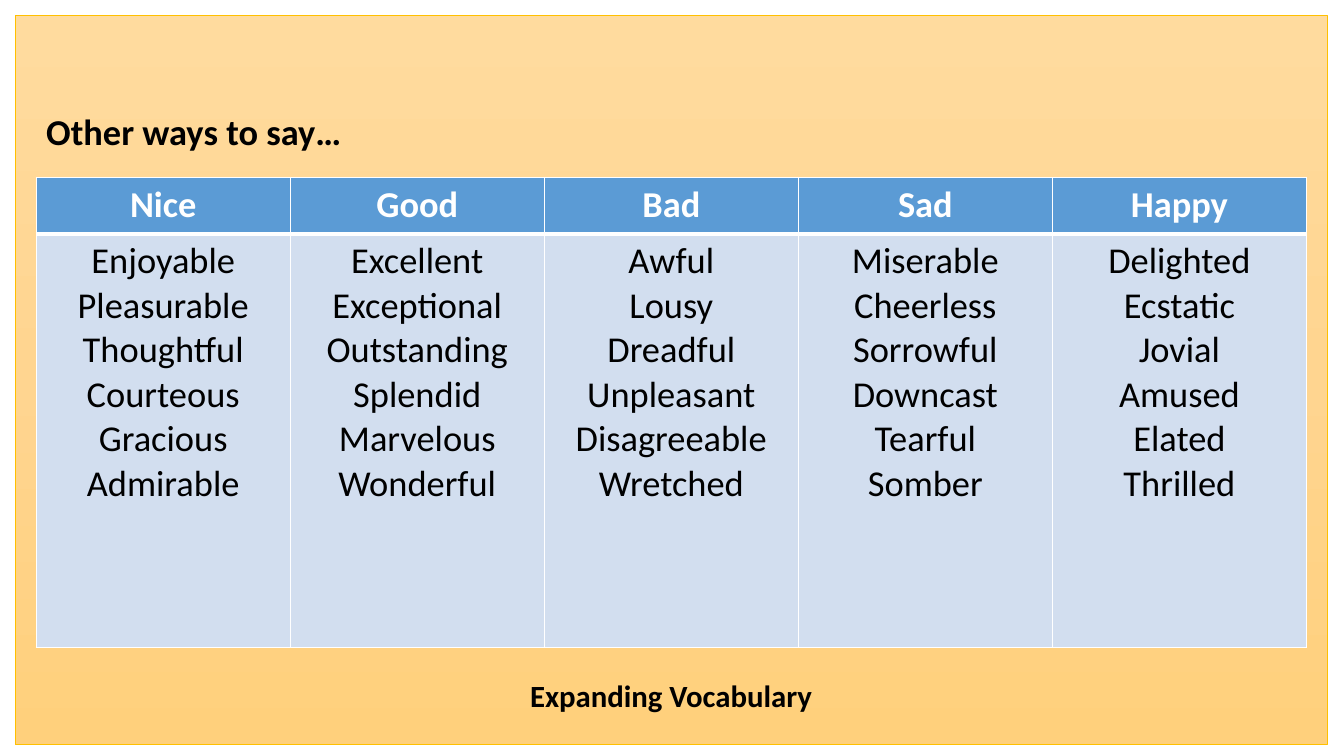
from copy import deepcopy
from dataclasses import dataclass

from lxml import etree
from pptx import Presentation
from pptx.dml.color import RGBColor
from pptx.enum.shapes import MSO_SHAPE
from pptx.enum.text import MSO_ANCHOR, PP_ALIGN
from pptx.oxml.ns import qn
from pptx.slide import Slide
from pptx.table import _Cell
from pptx.text.text import TextFrame
from pptx.util import Emu, Inches, Pt

RECTANGLE = MSO_SHAPE.RECTANGLE
BOTTOM = MSO_ANCHOR.BOTTOM
LEFT, CENTER = PP_ALIGN.LEFT, PP_ALIGN.CENTER

BLACK = RGBColor(0x00, 0x00, 0x00)
WHITE = RGBColor(0xFF, 0xFF, 0xFF)
GOLD = RGBColor(0xFF, 0xC0, 0x00)
BLUE = RGBColor(0x5B, 0x9B, 0xD5)
PALE_BLUE = RGBColor(0xD2, 0xDE, 0xEF)
PANEL_STOPS = (
    RGBColor(0xFF, 0xDB, 0x9E),
    RGBColor(0xFF, 0xD5, 0x90),
    RGBColor(0xFF, 0xD0, 0x7C),
)

FONT = "Calibri"
SLIDE_W, SLIDE_H = Inches(13.33), Inches(7.5)


@dataclass(frozen=True)
class Box:
    """A place on the slide, in percent of its width and height."""
    x: float
    y: float
    w: float
    h: float

    def emu(self) -> tuple[Emu, Emu, Emu, Emu]:
        return (Emu(int(SLIDE_W * self.x / 100)), Emu(int(SLIDE_H * self.y / 100)),
                Emu(int(SLIDE_W * self.w / 100)), Emu(int(SLIDE_H * self.h / 100)))


@dataclass(frozen=True)
class TextStyle:
    size: float
    color: RGBColor
    bold: bool
    align: PP_ALIGN


@dataclass(frozen=True)
class WordList:
    head: str
    synonyms: tuple[str, ...]


PANEL = Box(1.13, 2, 97.6, 96.53)
TABLE = Box(2.7, 23.47, 94.52, 62.13)
TITLE = Box(2.7, 13.73, 87.77, 7.2)
HEAD_SHARE = 0.12

TITLE_STYLE = TextStyle(26, BLACK, True, LEFT)
CAPTION_STYLE = TextStyle(22, BLACK, True, CENTER)
HEAD_STYLE = TextStyle(26, WHITE, True, CENTER)
WORD_STYLE = TextStyle(26, BLACK, False, CENTER)

WORD_LISTS = (
    WordList("Nice", ("Enjoyable", "Pleasurable", "Thoughtful",
                      "Courteous", "Gracious", "Admirable")),
    WordList("Good", ("Excellent", "Exceptional", "Outstanding",
                      "Splendid", "Marvelous", "Wonderful")),
    WordList("Bad", ("Awful", "Lousy", "Dreadful",
                     "Unpleasant", "Disagreeable", "Wretched")),
    WordList("Sad", ("Miserable", "Cheerless", "Sorrowful",
                     "Downcast", "Tearful", "Somber")),
    WordList("Happy", ("Delighted", "Ecstatic", "Jovial",
                       "Amused", "Elated", "Thrilled")),
)


def write(tf: TextFrame, lines: tuple[str, ...], style: TextStyle) -> None:
    tf.word_wrap = True
    for i, line in enumerate(lines):
        p = tf.add_paragraph() if i else tf.paragraphs[0]
        p.alignment = style.align
        r = p.add_run()
        r.text = line
        r.font.name = FONT
        r.font.size = Pt(style.size)
        r.font.bold = style.bold
        r.font.color.rgb = style.color


def add_panel(s: Slide, box: Box, caption: str) -> None:
    sp = s.shapes.add_shape(RECTANGLE, *box.emu())
    sp.shadow.inherit = False
    sp.line.color.rgb = GOLD
    sp.line.width = Pt(0.5)

    # Three-stop gradient, running downwards
    sp.fill.gradient()
    sp.fill.gradient_angle = 270
    first = sp._element.spPr.find(".//" + qn("a:gs"))
    first.addnext(deepcopy(first))
    for i, (stop, color) in enumerate(zip(sp.fill.gradient_stops, PANEL_STOPS)):
        stop.position = i / (len(PANEL_STOPS) - 1)
        stop.color.rgb = color

    tf = sp.text_frame
    tf.vertical_anchor = BOTTOM
    tf.margin_bottom = Inches(0.31)
    write(tf, (caption,), CAPTION_STYLE)


def add_borders(cell: _Cell, top: float, bottom: float) -> None:
    tcPr = cell._tc.get_or_add_tcPr()
    for side, width in (("L", 1), ("R", 1), ("T", top), ("B", bottom)):
        ln = etree.SubElement(tcPr, qn(f"a:ln{side}"), w=str(Pt(width)))
        fill = etree.SubElement(ln, qn("a:solidFill"))
        etree.SubElement(fill, qn("a:srgbClr"), val=str(WHITE))


def fill_cell(cell: _Cell, lines: tuple[str, ...], style: TextStyle,
              fill: RGBColor, top: float, bottom: float) -> None:
    add_borders(cell, top, bottom)
    cell.fill.solid()
    cell.fill.fore_color.rgb = fill
    write(cell.text_frame, lines, style)


def add_word_table(s: Slide, box: Box, lists: tuple[WordList, ...]) -> None:
    x, y, w, h = box.emu()
    table = s.shapes.add_table(2, len(lists), x, y, w, h).table
    table.rows[0].height = Emu(int(h * HEAD_SHARE))
    table.rows[1].height = Emu(h - table.rows[0].height)
    for col, words in enumerate(lists):
        fill_cell(table.cell(0, col), (words.head,), HEAD_STYLE, BLUE, 1, 3)
        fill_cell(table.cell(1, col), words.synonyms, WORD_STYLE, PALE_BLUE, 3, 1)


def main() -> None:
    prs = Presentation()
    prs.slide_width, prs.slide_height = SLIDE_W, SLIDE_H
    s = prs.slides.add_slide(prs.slide_layouts[6])

    # Background panel with its caption
    add_panel(s, PANEL, "Expanding Vocabulary")

    # Synonyms, one column per word
    add_word_table(s, TABLE, WORD_LISTS)

    # Title
    title = s.shapes.add_textbox(*TITLE.emu())
    write(title.text_frame, ("Other ways to say…",), TITLE_STYLE)

    prs.save("out.pptx")


if __name__ == "__main__":
    main()
